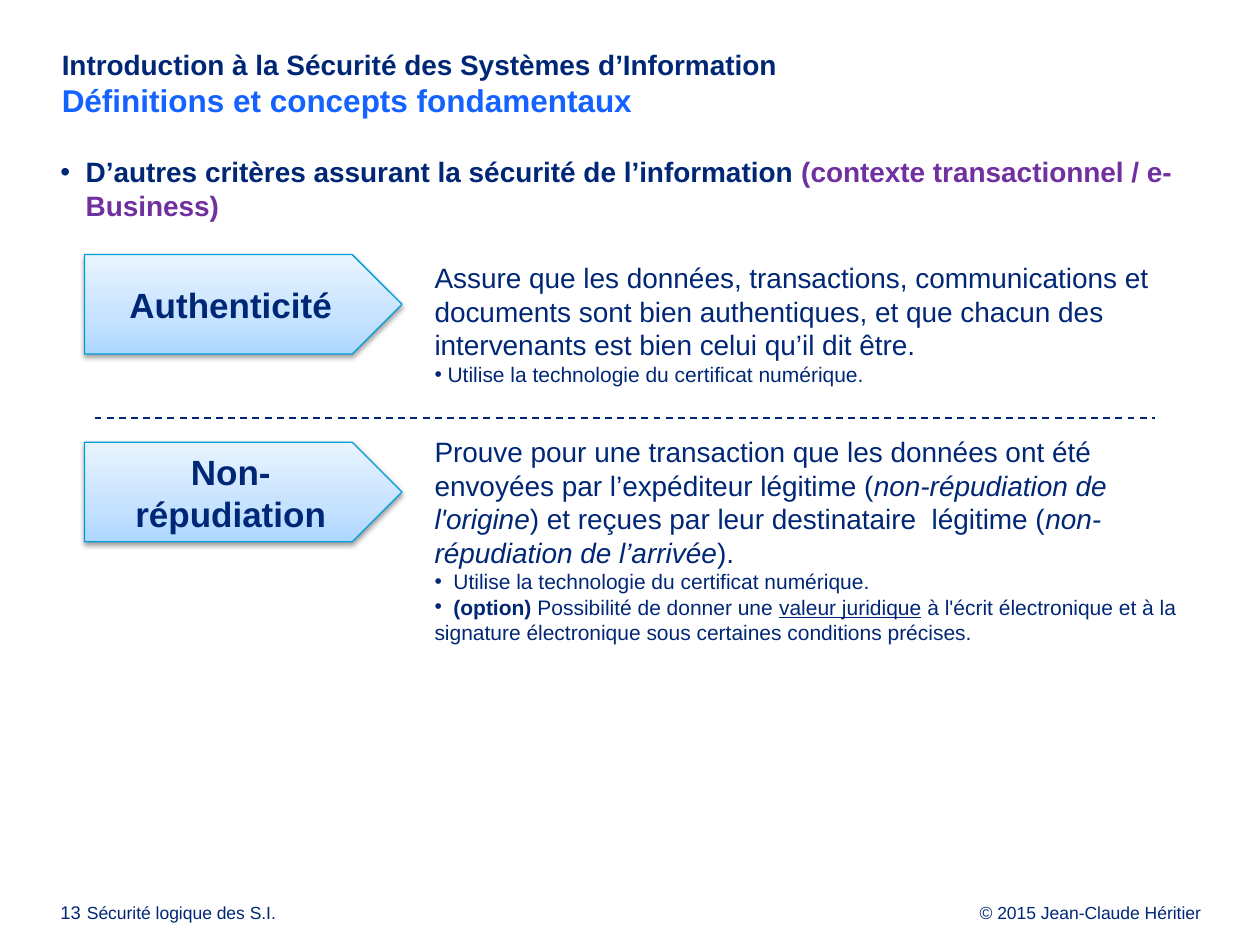
import pptx
import pptx.util
import pptx.dml.color
import pptx.enum.dml
import pptx.enum.shapes
import pptx.enum.text
import pptx.oxml
from pptx.oxml.ns import nsdecls, qn

Inches, Pt = pptx.util.Inches, pptx.util.Pt
ALIGN = pptx.enum.text.PP_ALIGN
ANCHOR = pptx.enum.text.MSO_ANCHOR

COLORS = {
    "navy": "002776", "blue": "1462FF", "purple": "7030A0",
    "rule": "002673", "border": "009DD9", "shadow": "000000",
    "light": "E9F4FF", "middle": "C5E2FF", "deep": "ADD7FF",
}


def rgb(name):
    return pptx.dml.color.RGBColor.from_string(COLORS[name])


def add_run(p, text, size, color="navy", bold=False, italic=False, underline=False):
    r = p.add_run()
    r.text = text
    r.font.name = "Arial"
    r.font.size = Pt(size)
    r.font.color.rgb = rgb(color)
    r.font.bold, r.font.italic, r.font.underline = bold, italic, underline


def add_bullet(p, indent=0):
    """Bullet with a hanging indent in inches; 0 lets the text follow the bullet."""
    pPr = p._p.get_or_add_pPr()
    pPr.set("marL", str(Inches(indent)))
    pPr.set("indent", str(-Inches(indent)))
    pPr.append(pptx.oxml.parse_xml(f'<a:buFont {nsdecls("a")} typeface="Arial"/>'))
    pPr.append(pptx.oxml.parse_xml(f'<a:buChar {nsdecls("a")} char="•"/>'))


def add_text_box(s, left, top, width, height, margins=None):
    tf = s.shapes.add_textbox(Inches(left), Inches(top), Inches(width), Inches(height)).text_frame
    tf.word_wrap = True
    if margins is not None:
        tf.margin_left = Inches(margins)
        tf.margin_top = tf.margin_right = tf.margin_bottom = 0
    return tf


def add_title(s, subject, topic):
    p = add_text_box(s, 0.45, 0.38, 9.21, 0.69, margins=0.04).paragraphs[0]
    add_run(p, subject, 16, bold=True)
    p.add_line_break()
    add_run(p, topic, 18, "blue", bold=True)


def add_lead(s, text, context):
    p = add_text_box(s, 0.44, 1.23, 9.2, 0.39, margins=0.04).paragraphs[0]
    p.space_after = Pt(2.7)
    add_bullet(p, 0.2)
    add_run(p, text, 16, bold=True)
    add_run(p, context, 16, "purple", bold=True)


def add_criterion(s, top, name):
    """Arrow-shaped label with a soft gradient and shadow."""
    sp = s.shapes.add_shape(pptx.enum.shapes.MSO_SHAPE.PENTAGON,
                            Inches(0.67), Inches(top), Inches(2.52), Inches(0.79))
    stops = "".join(f'<a:gs pos="{pos * 1000}"><a:srgbClr val="{COLORS[c]}"/></a:gs>'
                    for pos, c in ((0, "deep"), (35, "middle"), (100, "light")))
    sp._element.spPr.find(qn("a:prstGeom")).addnext(pptx.oxml.parse_xml(
        f'<a:gradFill {nsdecls("a")} rotWithShape="1"><a:gsLst>{stops}</a:gsLst>'
        '<a:lin ang="16200000" scaled="0"/></a:gradFill>'))
    sp.line.color.rgb = rgb("border")
    sp.line.width = Pt(0.75)
    sp._element.spPr.append(pptx.oxml.parse_xml(
        f'<a:effectLst {nsdecls("a")}><a:outerShdw blurRad="{Pt(3.1)}" dist="{Pt(1.6)}" '
        f'dir="5400000" rotWithShape="0"><a:srgbClr val="{COLORS["shadow"]}">'
        '<a:alpha val="38000"/></a:srgbClr></a:outerShdw></a:effectLst>'))
    tf = sp.text_frame
    tf.word_wrap = True
    tf.vertical_anchor = ANCHOR.MIDDLE
    tf.paragraphs[0].alignment = ALIGN.CENTER
    add_run(tf.paragraphs[0], name, 20, bold=True)


def add_definition(s, top, height, definition, notes):
    """Definition and bulleted notes, each a list of (text, run style)."""
    tf = add_text_box(s, 3.35, top, 6.22, height)
    for text, style in definition:
        add_run(tf.paragraphs[0], text, 16, **style)
    for note in notes:
        p = tf.add_paragraph()
        add_bullet(p)
        for text, style in note:
            add_run(p, text, 12, **style)


def add_separator(s, left, right, y):
    line = s.shapes.add_connector(pptx.enum.shapes.MSO_CONNECTOR.STRAIGHT,
                                  Inches(left), Inches(y), Inches(right), Inches(y))
    line.line.color.rgb = rgb("rule")
    line.line.width = Pt(1)
    line.line.dash_style = pptx.enum.dml.MSO_LINE.DASH
    line._element.spPr.append(pptx.oxml.parse_xml(f'<a:effectLst {nsdecls("a")}/>'))


def add_footer(s, left, width, text, size=10, align=ALIGN.LEFT):
    p = add_text_box(s, left, 7.18, width, 0.16, margins=0).paragraphs[0]
    p.alignment = align
    p.line_spacing = Pt(10.8)
    add_run(p, text, size)


def main():
    prs = pptx.Presentation()
    prs.slide_width, prs.slide_height = Inches(10), Inches(7.5)
    s = prs.slides.add_slide(prs.slide_layouts[6])

    add_footer(s, 7, 2.53, "© 2015 Jean-Claude Héritier", align=ALIGN.RIGHT)
    add_footer(s, 0.69, 2.53, "Sécurité logique des S.I.")
    add_footer(s, 0.48, 0.26, "13", size=10.5)

    add_title(s, "Introduction à la Sécurité des Systèmes d’Information ",
              "Définitions et concepts fondamentaux")
    add_lead(s, "D’autres critères assurant la sécurité de l’information ",
             "(contexte transactionnel / e-Business)")

    add_criterion(s, 2.02, "Authenticité")
    add_criterion(s, 3.51, "Non-répudiation")

    plain, italic = {}, {"italic": True}
    add_definition(
        s, 2.02, 1.11,
        [("Assure que les données, transactions, communications et documents sont bien "
          "authentiques, et que chacun des intervenants est bien celui qu’il dit être.", plain)],
        [[(" Utilise la technologie du certificat numérique.", plain)]])
    add_definition(
        s, 3.4, 1.78,
        [("Prouve pour une transaction que les données ont été envoyées par "
          "l’expéditeur légitime (", plain),
         ("non-répudiation de l'origine", italic),
         (") et reçues par leur destinataire  légitime (", plain),
         ("non-répudiation de l’arrivée", italic),
         (").", plain)],
        [[("  Utilise la technologie du certificat numérique.", plain)],
         [("  (option) ", {"bold": True}),
          ("Possibilité de donner une ", plain),
          ("valeur juridique", {"underline": True}),
          (" à l'écrit électronique et à la signature électronique sous certaines "
           "conditions précises.", plain)]])
    add_separator(s, 0.75, 9.17, 3.32)

    prs.save("out.pptx")


if __name__ == "__main__":
    main()
